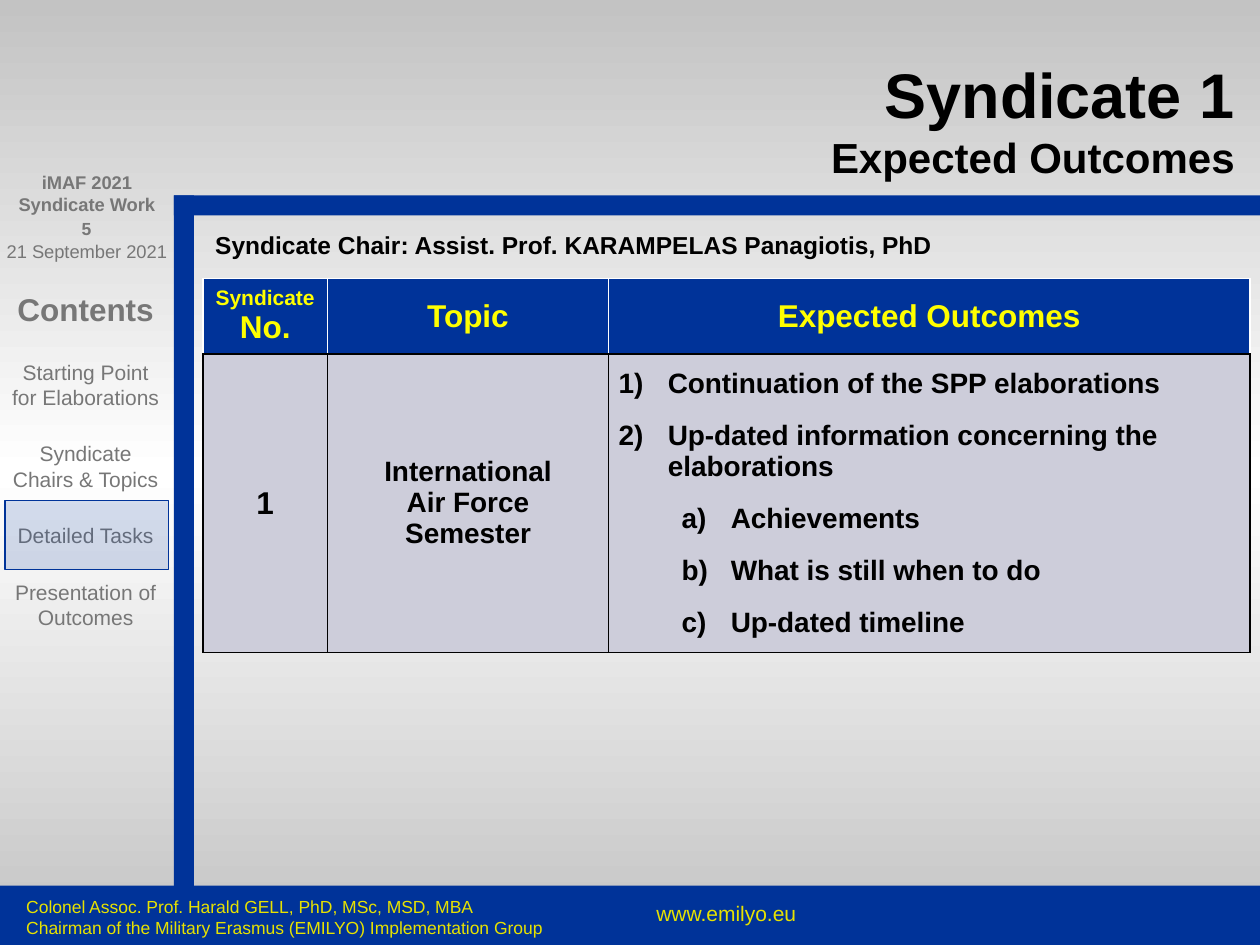
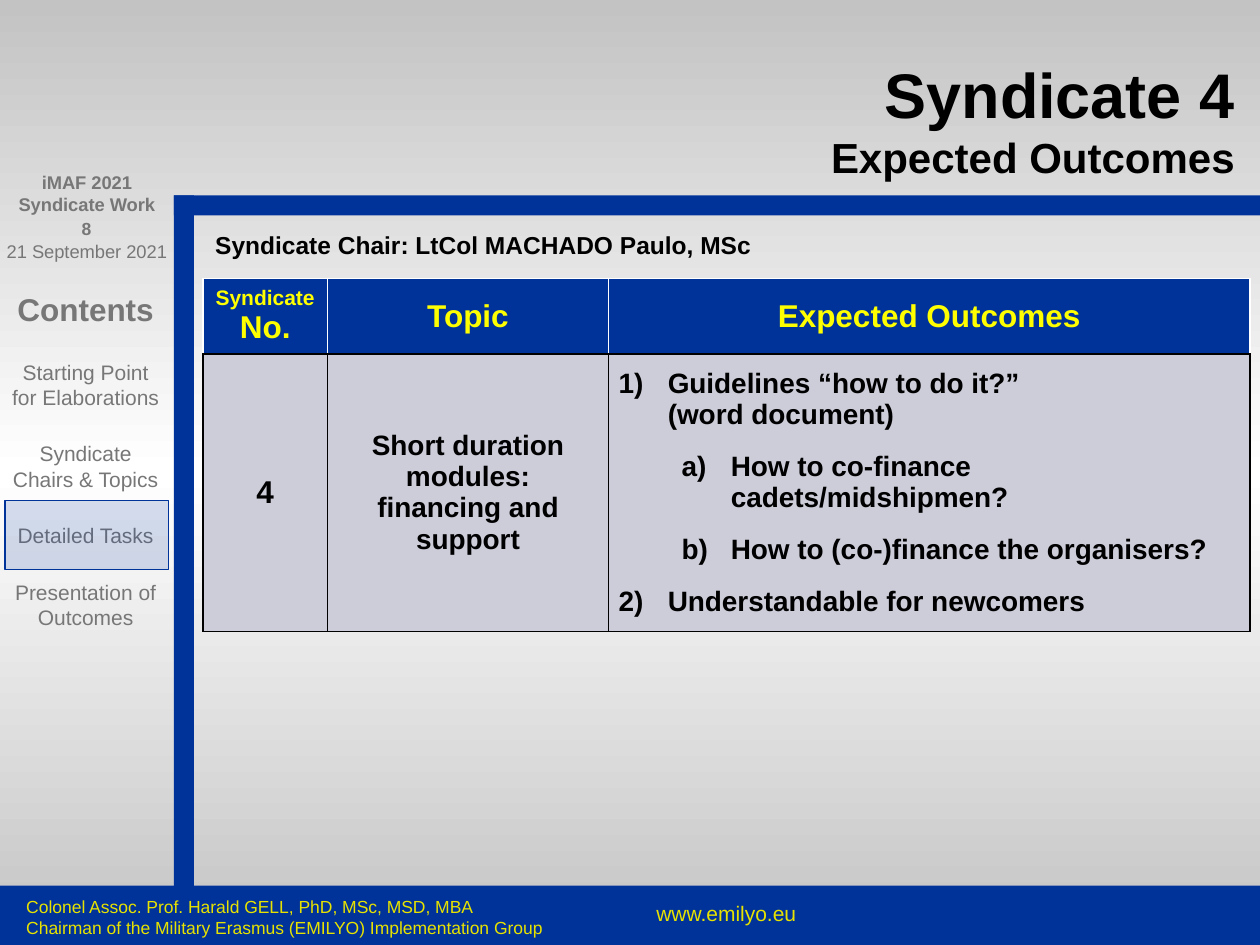
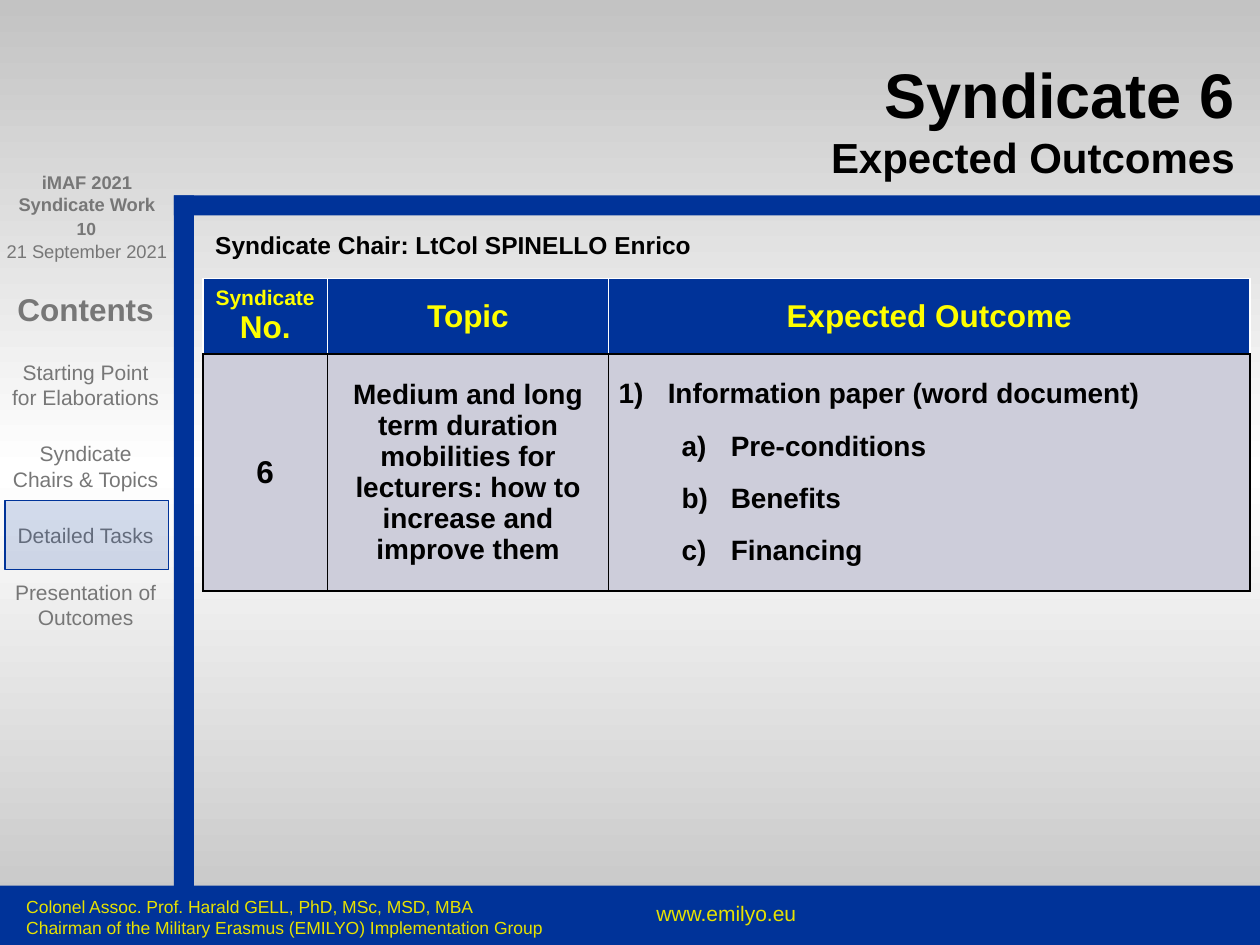
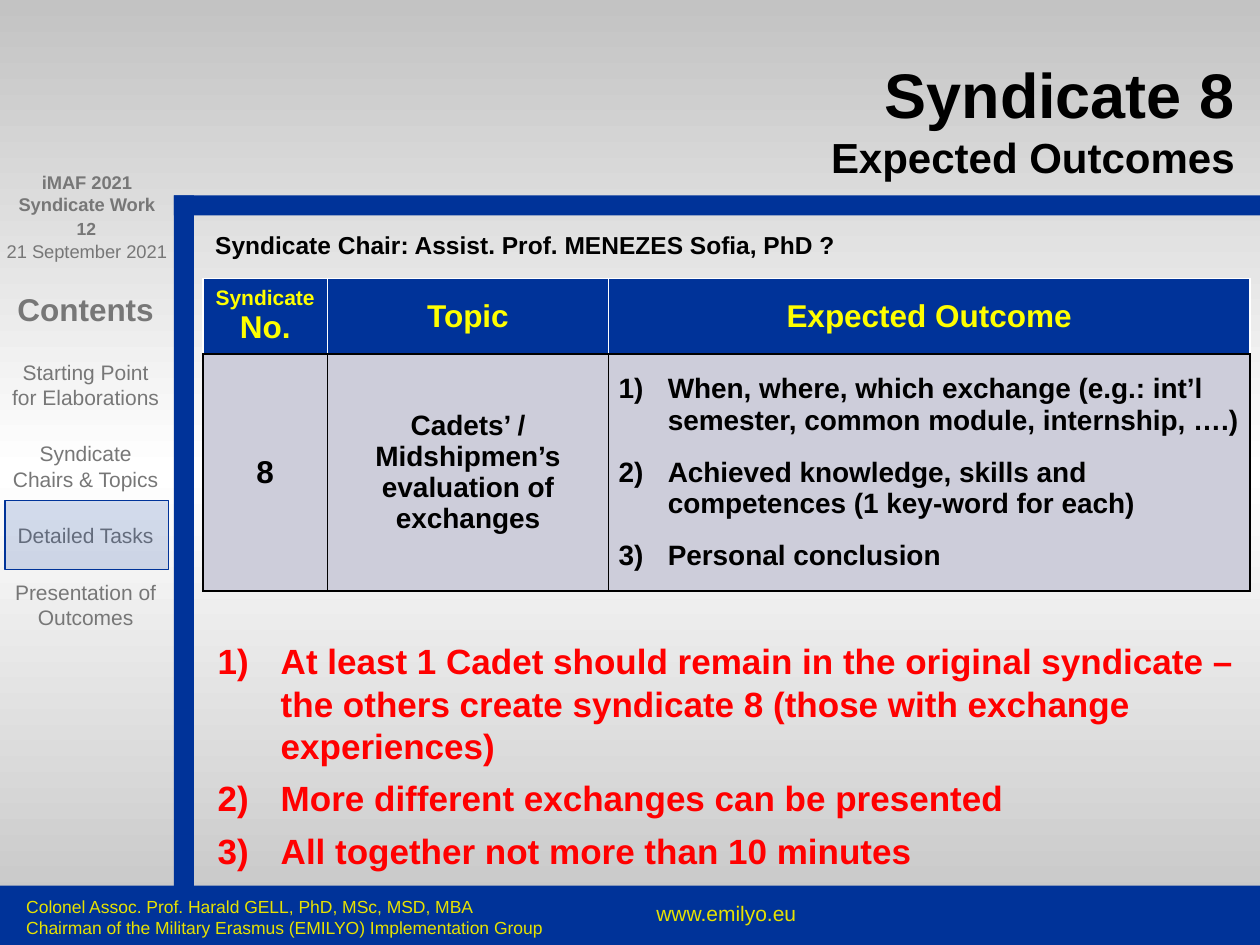
"""Build the syndicate slides with their expected outcomes."""
from copy import deepcopy
from dataclasses import dataclass
from typing import Any, Optional

from lxml.etree import SubElement
from pptx import Presentation
from pptx.dml.color import RGBColor
from pptx.enum.shapes import MSO_SHAPE
from pptx.enum.text import MSO_ANCHOR, MSO_AUTO_SIZE, PP_ALIGN
from pptx.oxml.ns import qn
from pptx.util import Inches, Pt


@dataclass(frozen=True)
class Theme:
    """Colours and type sizes of the deck."""
    font: str = "Arial"
    blue: str = "003399"
    black: str = "000000"
    white: str = "FFFFFF"
    red: str = "FF0000"
    grey: str = "777777"
    edge: str = "C3C3C3"
    cell: str = "CDCDDA"
    footer: str = "E7E200"
    header: str = "FFFF00"
    title_size: float = 36
    subtitle_size: float = 24
    note_size: float = 20
    heading_size: float = 18
    table_size: float = 16
    chair_size: float = 14
    label_size: float = 12
    event_size: float = 10.5
    small_size: float = 10


THEME = Theme()


@dataclass(frozen=True)
class Area:
    """Position and size in inches."""
    left: float
    top: float
    width: float
    height: float

    def lengths(self) -> list[int]:
        """Return the four lengths for a shape call."""
        return [Inches(value) for value in (self.left, self.top, self.width, self.height)]


@dataclass(frozen=True)
class Span:
    """Text with one look; a newline is a line break."""
    text: str
    size: float
    color: str = THEME.black
    bold: bool = True


@dataclass(frozen=True)
class Para:
    """One paragraph with its spacing and numbering."""
    spans: tuple[Span, ...]
    align: PP_ALIGN = PP_ALIGN.LEFT
    before: float = 0
    after: float = 0
    left: float = 0
    hanging: float = 0
    level: int = 0
    number: Optional[str] = None


@dataclass(frozen=True)
class Item:
    """One numbered outcome."""
    text: str
    level: int = 0


@dataclass(frozen=True)
class Syndicate:
    """Content of one slide."""
    number: int
    page_number: int
    chair: str
    topic: tuple[str, ...]
    outcomes: tuple[Item, ...]
    row_height: float
    outcome_label: str = "Expected Outcomes"
    notes: tuple[str, ...] = ()


BANDS = (
    Area(1.38, 1.55, 8.62, 0.16),
    Area(1.38, 1.55, 0.16, 5.61),
    Area(0, 7.03, 10, 0.47),
)
TITLE_AREA = Area(1.38, 0.19, 8.42, 1.25)
CHAIR_AREA = Area(1.61, 1.78, 8.27, 0.34)
NOTES_AREA = Area(1.63, 5.03, 8.27, 1.95)
HIGHLIGHT_AREA = Area(0.04, 3.97, 1.3, 0.55)
TABLE_LEFT, TABLE_TOP, HEADER_HEIGHT = 1.61, 2.21, 0.56
COLUMN_WIDTHS = (0.99, 2.23, 5.09)
CONTENTS = ("Starting Point for Elaborations", "Syndicate Chairs & Topics",
            "Detailed Tasks", "Presentation of Outcomes")
NUMBERING = ("arabicParenR", "alphaLcParenR")

SYNDICATES = (
    Syndicate(
        1, 5, "Assist. Prof. KARAMPELAS Panagiotis, PhD",
        ("International", "Air Force", "Semester"),
        (Item("Continuation of the SPP elaborations"),
         Item("Up-dated information concerning the elaborations"),
         Item("Achievements", 1),
         Item("What is still when to do", 1),
         Item("Up-dated timeline", 1)),
        2.25),
    Syndicate(
        4, 8, "LtCol MACHADO Paulo, MSc",
        ("Short duration modules:", "financing and support"),
        (Item("Guidelines “how to do it?”\n(word document)"),
         Item("How to co-finance cadets/midshipmen?", 1),
         Item("How to (co-)finance the organisers?", 1),
         Item("Understandable for newcomers")),
        2.08),
    Syndicate(
        6, 10, "LtCol SPINELLO Enrico",
        ("Medium and long term duration mobilities for lecturers: "
         "how to increase and improve them",),
        (Item("Information paper (word document)"),
         Item("Pre-conditions", 1),
         Item("Benefits", 1),
         Item("Financing", 1)),
        1.88, "Expected Outcome"),
    Syndicate(
        8, 12, "Assist. Prof. MENEZES Sofia, PhD ?",
        ("Cadets’ / Midshipmen’s evaluation of exchanges",),
        (Item("When, where, which exchange (e.g.: int’l semester, "
              "common module, internship, ….)"),
         Item("Achieved knowledge, skills and competences (1 key-word for each)"),
         Item("Personal conclusion")),
        1.88, "Expected Outcome",
        ("At least 1 Cadet should remain in the original syndicate – the others "
         "create syndicate 8 (those with exchange experiences)",
         "More different exchanges can be presented",
         "All together not more than 10 minutes")),
)


def set_all(target: Any, values: dict[str, Any]) -> None:
    """Set every named attribute on the target."""
    for name, value in values.items():
        setattr(target, name, value)


def centred(*spans: Span, before: float = 0, after: float = 0) -> Para:
    """Return a centred paragraph."""
    return Para(spans, PP_ALIGN.CENTER, before, after)


def write_para(para: Any, content: Para) -> None:
    """Fill a paragraph with formatted spans."""
    properties = para._p.get_or_add_pPr()
    if content.number:
        properties.set("marL", str(Inches(content.left)))
        properties.set("indent", str(Inches(-content.hanging)))
        SubElement(properties, qn("a:buFont"), typeface=THEME.font)
        SubElement(properties, qn("a:buAutoNum"), type=content.number)
    set_all(para, {"alignment": content.align, "level": content.level,
                   "space_before": Pt(content.before), "space_after": Pt(content.after)})
    for span in content.spans:
        for index, text in enumerate(span.text.split("\n")):
            if index:
                para.add_line_break()
                para._p[-1].append(deepcopy(para.runs[-1].font._rPr))
            if text:
                run = para.add_run()
                run.text = text
                set_all(run.font, {"name": THEME.font, "size": Pt(span.size),
                                   "bold": span.bold})
                run.font.color.rgb = RGBColor.from_string(span.color)


def write_frame(frame: Any, paras: list[Para]) -> None:
    """Fill a text frame with paragraphs."""
    for index, content in enumerate(paras):
        para = frame.add_paragraph() if index else frame.paragraphs[0]
        write_para(para, content)


def set_margins(frame: Any, inset: float) -> None:
    """Give a text frame the same margin on all sides."""
    sides = ("left", "top", "right", "bottom")
    set_all(frame, {f"margin_{side}": Inches(inset) for side in sides})


def add_text(page: Any, area: Area, paras: list[Para], inset: Optional[float] = None,
             wrap: bool = True, grow: bool = False) -> None:
    """Add a text box."""
    frame = page.shapes.add_textbox(*area.lengths()).text_frame
    fit = MSO_AUTO_SIZE.SHAPE_TO_FIT_TEXT if grow else MSO_AUTO_SIZE.NONE
    set_all(frame, {"word_wrap": wrap, "auto_size": fit})
    if inset is not None:
        set_margins(frame, inset)
    write_frame(frame, paras)


def add_band(page: Any, area: Area) -> Any:
    """Add a plain blue rectangle."""
    band = page.shapes.add_shape(MSO_SHAPE.RECTANGLE, *area.lengths())
    band.shadow.inherit = False
    band.fill.solid()
    band.fill.fore_color.rgb = RGBColor.from_string(THEME.blue)
    band.line.fill.background()
    return band


def add_highlight(page: Any) -> None:
    """Mark the current contents entry with a see-through rectangle."""
    mark = add_band(page, HIGHLIGHT_AREA)
    color = mark.element.spPr.find(qn("a:solidFill"))[0]
    SubElement(color, qn("a:alpha"), val="16000")
    mark.line.color.rgb = RGBColor.from_string(THEME.blue)
    mark.line.width = Pt(0.75)


def add_frame_parts(page: Any, page_number: int) -> None:
    """Add the bands, footer and sidebar shared by all slides."""
    for area in BANDS:
        add_band(page, area)
    add_text(page, Area(4.9, 7.1, 1.73, 0.35),
             [centred(Span("www.emilyo.eu", THEME.label_size, THEME.footer, False))])
    add_text(page, Area(0.11, 7.06, 4.38, 0.35), [
        Para((Span(line, THEME.small_size, THEME.footer, False),)) for line in (
            "Colonel Assoc. Prof. Harald GELL, PhD, MSc, MSD, MBA",
            "Chairman of the Military Erasmus (EMILYO) Implementation Group")])
    add_text(page, Area(0.44, 1.68, 0.49, 0.27),
             [centred(Span(str(page_number), THEME.small_size, THEME.grey))],
             wrap=False, grow=True)
    entries = [Span("Contents", THEME.heading_size, THEME.grey)]
    entries += [Span(text, THEME.label_size, THEME.grey, False) for text in CONTENTS]
    add_text(page, Area(0.05, 2.26, 1.26, 4.78),
             [centred(entry, after=18) for entry in entries], inset=0.04)
    add_text(page, Area(0, 1.36, 1.38, 0.82), [
        centred(Span("iMAF 2021", THEME.event_size, THEME.grey)),
        centred(Span("Syndicate Work", THEME.event_size, THEME.grey)),
        centred(Span("21 September 2021", THEME.event_size, THEME.grey, False), before=14),
    ], inset=0)


def write_title(page: Any, number: int) -> None:
    """Place and fill the title placeholder."""
    title = page.shapes.title
    set_all(title, dict(zip(("left", "top", "width", "height"), TITLE_AREA.lengths())))
    frame = title.text_frame
    set_all(frame, {"vertical_anchor": MSO_ANCHOR.BOTTOM, "word_wrap": True,
                    "auto_size": MSO_AUTO_SIZE.NONE})
    set_margins(frame, 0)
    write_frame(frame, [Para((Span(f"Syndicate {number}\n", THEME.title_size),
                              Span("Expected Outcomes", THEME.subtitle_size)),
                             PP_ALIGN.RIGHT)])


def set_borders(cell: Any, colors: dict[str, str]) -> None:
    """Draw one-point borders on the sides of a cell."""
    properties = cell._tc.get_or_add_tcPr()
    for side, color in colors.items():
        line = SubElement(properties, qn(f"a:ln{side}"), w=str(Pt(1)))
        fill = SubElement(line, qn("a:solidFill"))
        SubElement(fill, qn("a:srgbClr"), val=color)


def outcome_paras(items: tuple[Item, ...]) -> list[Para]:
    """Return the outcomes as numbered paragraphs."""
    return [Para((Span(item.text, THEME.table_size),), before=6 if index else 0, after=6,
                 left=0.39 + 0.5 * item.level, hanging=0.39, level=item.level,
                 number=NUMBERING[item.level])
            for index, item in enumerate(items)]


def add_outcome_table(page: Any, syndicate: Syndicate) -> None:
    """Add the table of number, topic and outcomes."""
    heights = (HEADER_HEIGHT, syndicate.row_height)
    area = Area(TABLE_LEFT, TABLE_TOP, sum(COLUMN_WIDTHS), sum(heights))
    table = page.shapes.add_table(2, 3, *area.lengths()).table
    set_all(table, {"first_row": False, "horz_banding": False})
    for column, width in zip(table.columns, COLUMN_WIDTHS):
        column.width = Inches(width)
    for row, height in zip(table.rows, heights):
        row.height = Inches(height)
    header = [centred(Span(text, THEME.heading_size, THEME.header))
              for text in ("No.", "Topic", syndicate.outcome_label)]
    small_label = centred(Span("Syndicate", THEME.label_size, THEME.header))
    contents = (
        ([small_label, header[0]], [header[1]], [header[2]]),
        ([centred(Span(str(syndicate.number), THEME.heading_size))],
         [centred(Span(line, THEME.table_size)) for line in syndicate.topic],
         outcome_paras(syndicate.outcomes)),
    )
    fills = (THEME.blue, THEME.cell)
    borders = ({"L": THEME.white, "R": THEME.white, "T": THEME.white, "B": THEME.black},
               dict.fromkeys("LRTB", THEME.black))
    for row, cells, fill, colors in zip(table.rows, contents, fills, borders):
        for cell, paras in zip(row.cells, cells):
            set_borders(cell, colors)
            cell.fill.solid()
            cell.fill.fore_color.rgb = RGBColor.from_string(fill)
            set_all(cell, {"vertical_anchor": MSO_ANCHOR.MIDDLE,
                           "margin_left": Inches(0.08), "margin_right": Inches(0.08),
                           "margin_top": Inches(0.05), "margin_bottom": Inches(0.05)})
            write_frame(cell.text_frame, paras)


def set_background(master: Any) -> None:
    """Give the master a vertical gradient that is white in the middle."""
    fill = master.background.fill
    fill.gradient()
    fill.gradient_angle = 270
    stops = master.element.find(".//" + qn("a:gsLst"))
    for stop in list(stops):
        stops.remove(stop)
    for position, color in ((0, THEME.edge), (50, THEME.white), (100, THEME.edge)):
        stop = SubElement(stops, qn("a:gs"), pos=str(position * 1000))
        SubElement(stop, qn("a:srgbClr"), val=color)


def add_syndicate(deck: Any, syndicate: Syndicate) -> None:
    """Add the slide of one syndicate."""
    page = deck.slides.add_slide(deck.slide_layouts[5])
    add_frame_parts(page, syndicate.page_number)
    write_title(page, syndicate.number)
    add_outcome_table(page, syndicate)
    chair = Span(f"Syndicate Chair: {syndicate.chair}", THEME.chair_size)
    add_text(page, CHAIR_AREA, [Para((chair,))], grow=True)
    add_highlight(page)
    if syndicate.notes:
        add_text(page, NOTES_AREA, [
            Para((Span(note, THEME.note_size, THEME.red),), after=6, left=0.5,
                 hanging=0.5, number=NUMBERING[0])
            for note in syndicate.notes], grow=True)


def main() -> None:
    """Build and save the deck."""
    deck = Presentation()
    set_all(deck, {"slide_width": Inches(10), "slide_height": Inches(7.5)})
    set_background(deck.slide_master)
    for syndicate in SYNDICATES:
        add_syndicate(deck, syndicate)
    deck.save("out.pptx")


if __name__ == "__main__":
    main()
